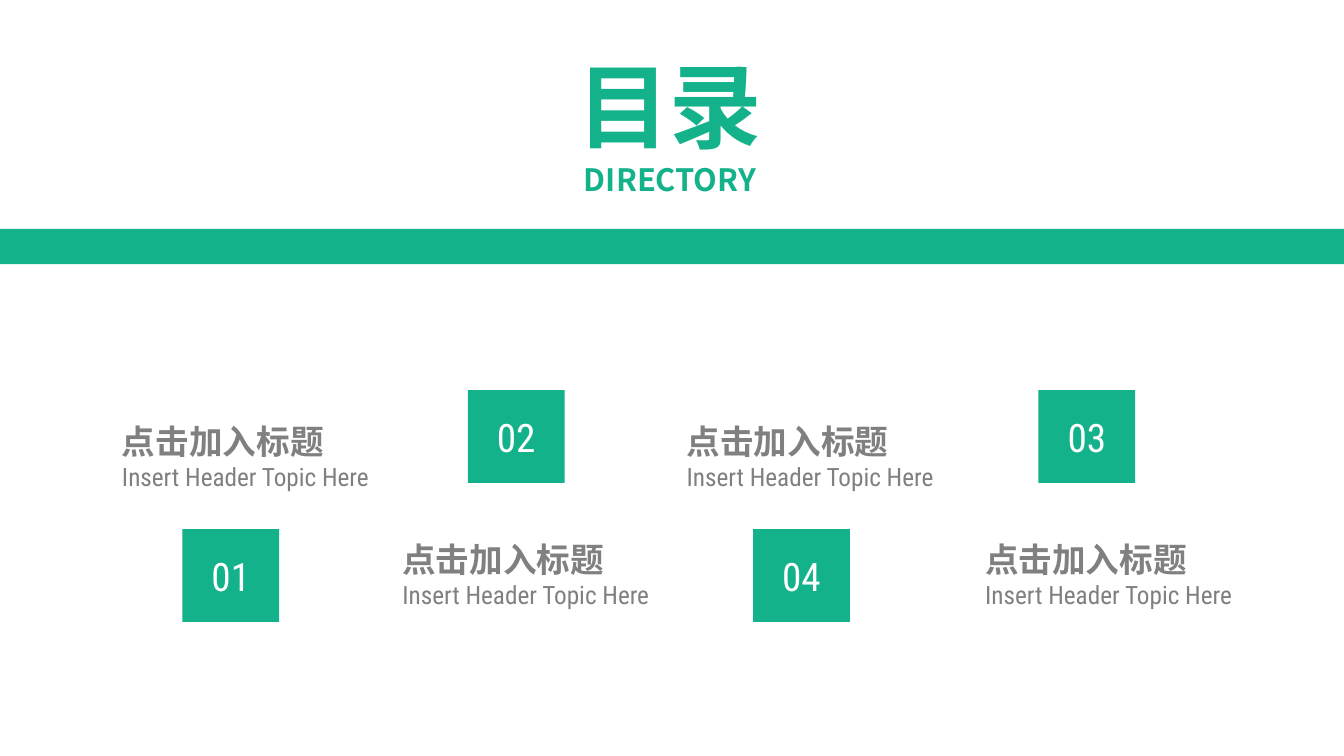
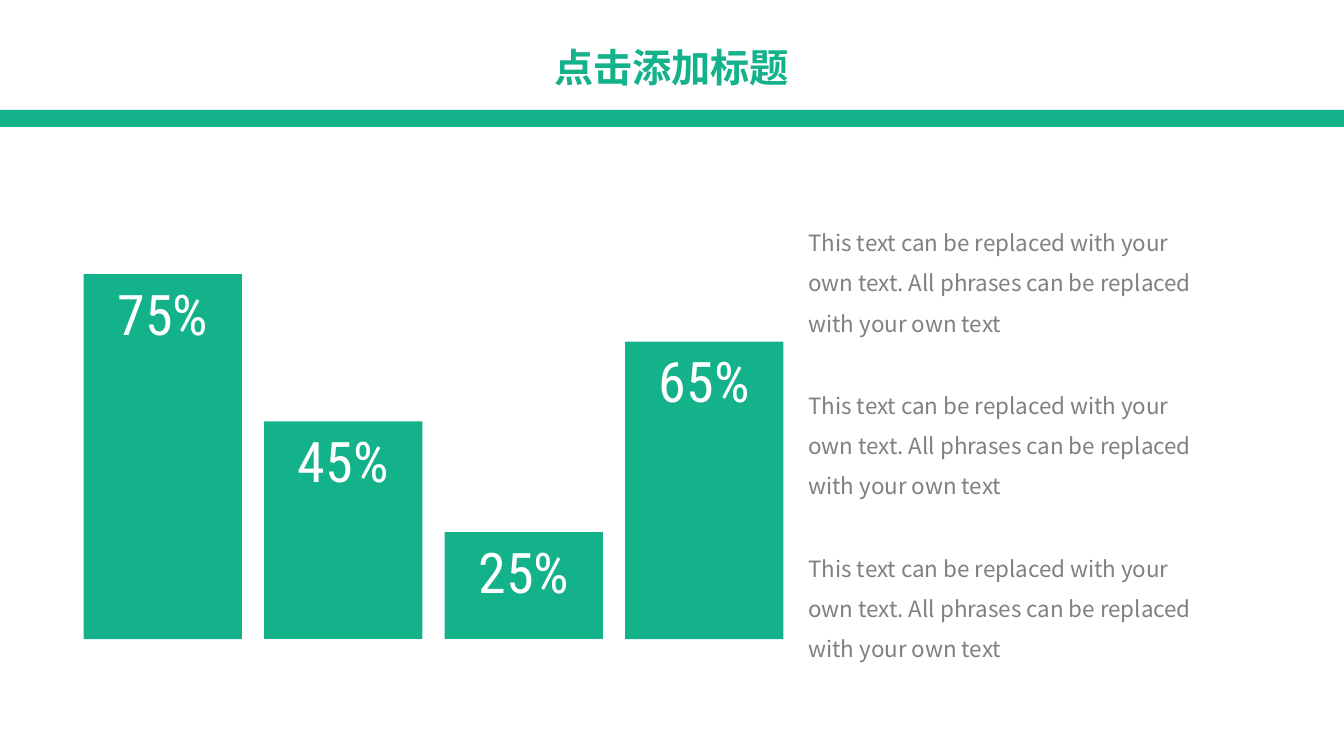
from pptx import Presentation
from pptx.dml.color import RGBColor
from pptx.enum.shapes import MSO_SHAPE
from pptx.enum.text import MSO_ANCHOR, MSO_AUTO_SIZE, PP_ALIGN
from pptx.oxml.ns import qn
from pptx.util import Inches, Pt
from lxml.etree import SubElement

WIDTH, HEIGHT = 13.33, 7.5
COLORS = {"green": "14B28B", "gray": "808080", "white": "FFFFFF"}
HEADING_FONT = "Noto Sans CJK SC"
BODY_FONT = "Noto Sans CJK JP"
LATIN_FONT = "Roboto Condensed"

# Contents page: four columns, with squares and topics swapping rows
SQUARE_LEFT, SQUARE_STEP = 1.81, 2.83
SQUARE_ROWS = (5.25, 3.87)
TOPIC_ROWS = (4.13, 5.3)
TOPICS = [("01", 1.21), ("02", 3.99), ("04", 6.81), ("03", 9.77)]

# Bar page
BARS = [("75%", 3.62), ("45%", 2.16), ("25%", 1.06), ("65%", 2.95)]
BAR_LEFT, BAR_STEP, BAR_WIDTH, BAR_BASE = 0.83, 1.79, 1.57, 6.34
NOTE_TOP, NOTE_STEP, NOTE_COUNT = 2.09, 1.615, 3
NOTE = ("This text can be replaced with your own text. "
        "All phrases can be replaced with your own text")


def inches(*lengths):
    return [Inches(length) for length in lengths]


def style(para, size, font, color, bold=False):
    """Format every run, for Latin and East Asian characters alike."""
    for span in para.runs:
        span.font.size = Pt(size)
        span.font.bold = bold
        span.font.name = font
        span.font.color.rgb = RGBColor.from_string(COLORS[color])
        east_asian = SubElement(span.font._element, qn("a:ea"))
        east_asian.set("typeface", font)
        span.font._element.find(qn("a:latin")).addnext(east_asian)


def add_title(page, area, lines, anchor):
    """Place the title; lines are pairs of text and size."""
    title = page.shapes.title
    title.left, title.top, title.width, title.height = inches(*area)
    frame = title.text_frame
    frame.text = "\n".join(text for text, _ in lines)
    frame.auto_size = MSO_AUTO_SIZE.NONE
    frame.vertical_anchor = anchor
    for para, (_, size) in zip(frame.paragraphs, lines):
        para.alignment = PP_ALIGN.CENTER
        style(para, size, HEADING_FONT, "green", bold=True)


def add_block(page, area, text="", size=28, anchor=MSO_ANCHOR.MIDDLE):
    block = page.shapes.add_shape(MSO_SHAPE.RECTANGLE, *inches(*area))
    block.shadow.inherit = False
    block.fill.solid()
    block.fill.fore_color.rgb = RGBColor.from_string(COLORS["green"])
    block.line.fill.background()
    if text:
        frame = block.text_frame
        frame.text = text
        frame.vertical_anchor = anchor
        para = frame.paragraphs[0]
        para.alignment = PP_ALIGN.CENTER
        style(para, size, LATIN_FONT, "white")


def add_band(page, top, height):
    add_block(page, (0, top, WIDTH, height))


def add_text(page, area, text):
    box = page.shapes.add_textbox(*inches(*area))
    frame = box.text_frame
    frame.word_wrap = True
    frame.text = text
    return frame


def add_topic(page, left, top):
    frame = add_text(page, (left, top, 3.45, 0.81),
                     "点击加入标题\nInsert Header Topic Here")
    frame.margin_left = 0
    heading, subheading = frame.paragraphs
    style(heading, 24, HEADING_FONT, "gray", bold=True)
    style(subheading, 18, LATIN_FONT, "gray")


def add_note(page, top):
    frame = add_text(page, (7.92, top, 4.07, 1.31), NOTE)
    para = frame.paragraphs[0]
    para.line_spacing = 1.5
    style(para, 16, BODY_FONT, "gray")


def build_contents(page):
    add_title(page, (5.35, -0.07, 2.59, 2.59),
              [("目录", 66), ("DIRECTORY", 22)], MSO_ANCHOR.MIDDLE)
    add_band(page, 2.27, 0.35)
    for column, (number, topic_left) in enumerate(TOPICS):
        row = column % 2
        add_topic(page, topic_left, TOPIC_ROWS[row])
        square_left = SQUARE_LEFT + column * SQUARE_STEP
        add_block(page, (square_left, SQUARE_ROWS[row], 0.96, 0.92), number)


def build_bars(page):
    add_band(page, 1.09, 0.17)
    add_title(page, (2.78, 0.38, 7.76, 0.87),
              [("点击添加标题", 28)], MSO_ANCHOR.TOP)
    for column, (label, height) in enumerate(BARS):
        left = BAR_LEFT + column * BAR_STEP
        add_block(page, (left, BAR_BASE - height, BAR_WIDTH, height),
                  label, 40, MSO_ANCHOR.TOP)
    for row in range(NOTE_COUNT):
        add_note(page, NOTE_TOP + row * NOTE_STEP)


def main():
    deck = Presentation()
    deck.slide_width, deck.slide_height = inches(WIDTH, HEIGHT)
    title_only = deck.slide_layouts.get_by_name("Title Only")
    for build in (build_contents, build_bars):
        build(deck.slides.add_slide(title_only))
    deck.save("out.pptx")


if __name__ == "__main__":
    main()
